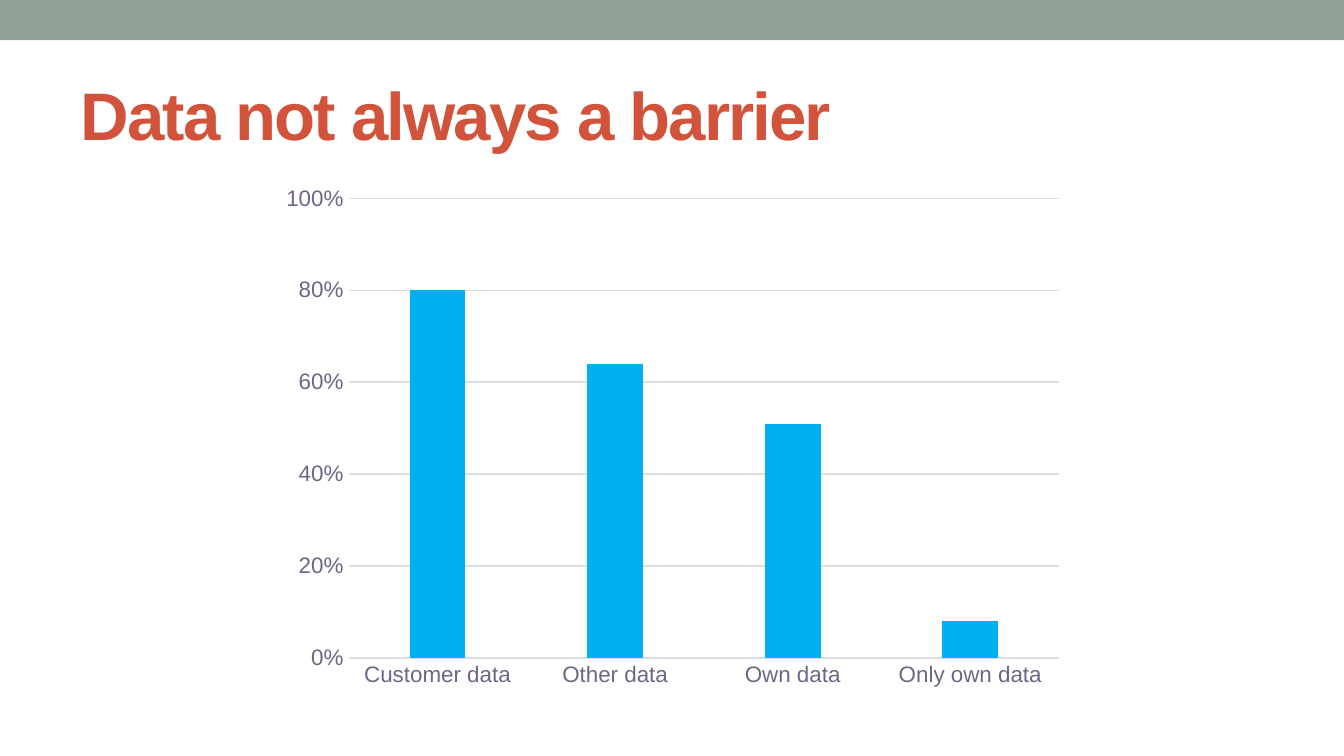
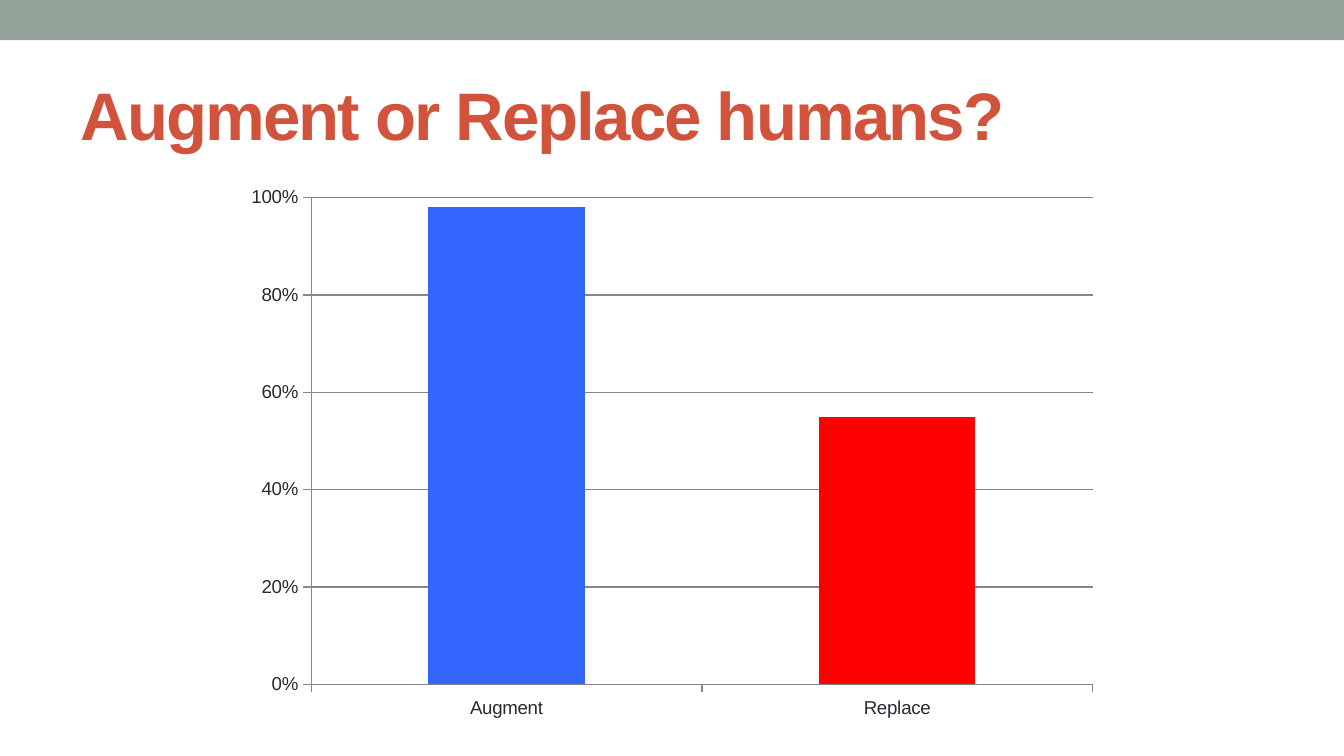
from dataclasses import dataclass

from pptx import Presentation
from pptx.chart.data import CategoryChartData
from pptx.dml.color import RGBColor as RGB
from pptx.enum.chart import XL_CHART_TYPE as ChartType, XL_TICK_MARK as Tick
from pptx.enum.shapes import MSO_SHAPE as Shape
from pptx.enum.text import MSO_ANCHOR as Anchor
from pptx.util import Inches, Pt


@dataclass(frozen=True)
class Theme:
    font: str = "Arial"
    band: str = "93A299"
    title: str = "D2533C"
    ink: str = "292934"
    soft_ink: str = "696986"
    soft_line: str = "DCDCE3"
    line: str = "868686"
    sky: str = "00B0F0"
    blue: str = "3366FF"
    red: str = "FF0000"
    title_size: int = 36
    label_size: int = 12
    small_size: int = 10
    line_width: float = 0.75


THEME = Theme()
BAND_BOX = (0, 0, 10, 0.3)
TITLE_BOX = (0.5, 0.44, 9, 0.81)


@dataclass(frozen=True)
class AxisLook:
    ink: str
    size: int
    line: str
    tick: Tick
    value_line: bool


SOFT_AXES = AxisLook(THEME.soft_ink, THEME.label_size, THEME.soft_line, Tick.NONE, False)
PLAIN_AXES = AxisLook(THEME.ink, THEME.small_size, THEME.line, Tick.OUTSIDE, True)


def inches(box):
    return [Inches(length) for length in box]


def style_font(font, size, color, bold=False):
    font.name = THEME.font
    font.size = Pt(size)
    font.bold = bold
    font.color.rgb = RGB.from_string(color)


def style_line(line, color):
    line.color.rgb = RGB.from_string(color)
    line.width = Pt(THEME.line_width)


def fill_solid(fill, color):
    fill.solid()
    fill.fore_color.rgb = RGB.from_string(color)


def add_band(slide, box):
    band = slide.shapes.add_shape(Shape.RECTANGLE, *inches(box))
    band.shadow.inherit = False
    fill_solid(band.fill, THEME.band)
    band.line.fill.background()


def add_title(slide, box, wording):
    frame = slide.shapes.add_textbox(*inches(box)).text_frame
    frame.word_wrap = True
    frame.vertical_anchor = Anchor.MIDDLE
    heading = frame.paragraphs[0]
    run = heading.add_run()
    run.text = wording
    style_font(heading.font, THEME.title_size, THEME.title, bold=True)
    # Letter spacing of -1 pt
    run.font._element.set("spc", "-100")


def add_share_chart(slide, box, shares, colors, look, gap, overlap):
    """Column chart of shares on a scale from 0% to 100%."""
    chart_data = CategoryChartData(number_format="0%")
    chart_data.categories = list(shares)
    chart_data.add_series("Series 1", list(shares.values()))
    chart = slide.shapes.add_chart(
        ChartType.COLUMN_CLUSTERED, *inches(box), chart_data).chart
    chart.has_title = False
    chart.has_legend = False
    style_font(chart.font, THEME.small_size, THEME.ink)

    # Columns: the first colour is the series, later ones are single columns
    plot = chart.plots[0]
    plot.vary_by_categories = False
    plot.gap_width = gap
    plot.overlap = overlap
    series = plot.series[0]
    fill_solid(series.format.fill, colors[0])
    for index, color in enumerate(colors[1:], start=1):
        fill_solid(series.points[index].format.fill, color)

    # Axes and gridlines
    categories, values = chart.category_axis, chart.value_axis
    for axis in (categories, values):
        axis.major_tick_mark = look.tick
        axis.minor_tick_mark = Tick.NONE
        style_font(axis.tick_labels.font, look.size, look.ink)
        style_line(axis.format.line, look.line)
    if not look.value_line:
        values.format.line.fill.background()
    values.minimum_scale, values.maximum_scale = 0, 1
    values.major_unit = 0.2
    values.tick_labels.number_format = "0%"
    values.tick_labels.number_format_is_linked = False
    values.has_major_gridlines = True
    style_line(values.major_gridlines.format.line, look.line)


def add_chart_slide(deck, title, **chart):
    slide = deck.slides.add_slide(deck.slide_layouts[6])
    add_band(slide, BAND_BOX)
    add_title(slide, TITLE_BOX, title)
    add_share_chart(slide, **chart)


def main():
    deck = Presentation()
    # Widescreen, 16:9
    deck.slide_width = Inches(10)
    deck.slide_height = Inches(10 * 9 / 16)
    add_chart_slide(
        deck, "Data not always a barrier",
        box=(2.01, 1.31, 5.99, 3.88),
        shares={"Customer data": 0.8, "Other data": 0.64,
                "Own data": 0.51, "Only own data": 0.08},
        colors=[THEME.sky], look=SOFT_AXES, gap=219, overlap=-27)
    add_chart_slide(
        deck, "Augment or Replace humans?",
        box=(1.74, 1.31, 6.52, 4.12),
        shares={"Augment": 0.98, "Replace": 0.55},
        colors=[THEME.blue, THEME.red], look=PLAIN_AXES, gap=150, overlap=0)
    deck.save("out.pptx")


if __name__ == "__main__":
    main()
